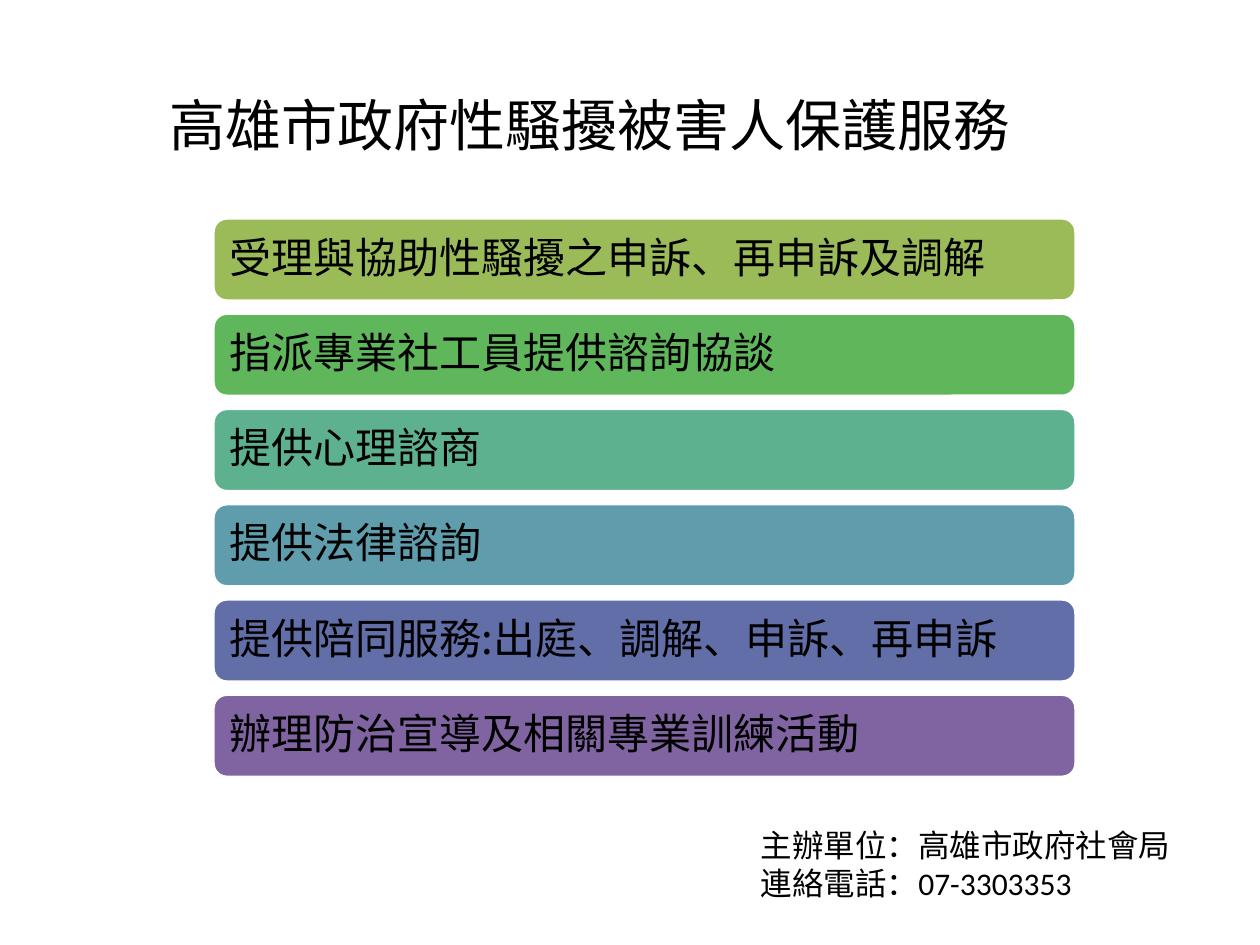
from dataclasses import dataclass

from lxml.etree import SubElement
from pptx import Presentation
from pptx.dml.color import RGBColor
from pptx.enum.shapes import MSO_SHAPE
from pptx.enum.text import MSO_ANCHOR, PP_ALIGN
from pptx.oxml.ns import qn
from pptx.util import Inches, Pt


@dataclass(frozen=True)
class Theme:
    ink: str = "000000"
    outline: str = "FFFFFF"
    bars: tuple = ("9BBB59", "5FB65B", "5DB18E", "5F9DAC", "626EA7", "8064A2")
    title_font: str = "Noto Sans CJK SC"
    body_font: str = "Noto Sans CJK JP"
    contact_font: str = "Calibri"
    title_size: int = 32
    body_size: int = 24
    contact_size: int = 18


def write_text(box, text, size, latin, east_asian, align=PP_ALIGN.LEFT, spacing=1.0):
    frame = box.text_frame
    frame.word_wrap = True
    frame.text = text
    for para in frame.paragraphs:
        para.alignment = align
        para.line_spacing = spacing
        for span in para.runs:
            span.font.size = Pt(size)
            span.font.name = latin
            span.font.color.rgb = RGBColor.from_string(theme.ink)
            SubElement(span.font._element, qn("a:ea"), typeface=east_asian)
    return frame


theme = Theme()
services = (
    "受理與協助性騷擾之申訴、再申訴及調解",
    "指派專業社工員提供諮詢協談",
    "提供心理諮商",
    "提供法律諮詢",
    "提供陪同服務:出庭、調解、申訴、再申訴",
    "辦理防治宣導及相關專業訓練活動",
)
contact = "主辦單位：高雄市政府社會局\n連絡電話：07-3303353"

deck = Presentation()
deck.slide_width, deck.slide_height = Inches(10), Inches(7.5)
page = deck.slides.add_slide(deck.slide_layouts[6])

title = page.shapes.add_textbox(Inches(1.06), Inches(0.36), Inches(7.24), Inches(1.25))
frame = write_text(title, "高雄市政府性騷擾被害人保護服務", theme.title_size,
                   theme.title_font, theme.title_font, PP_ALIGN.CENTER)
frame.vertical_anchor = MSO_ANCHOR.MIDDLE

bar_left, first_top, bar_width, bar_height = 1.69, 1.73, 6.85, 0.66
row_pitch = (5.51 - first_top) / (len(services) - 1)
for row, (service, color) in enumerate(zip(services, theme.bars)):
    bar = page.shapes.add_shape(
        MSO_SHAPE.ROUNDED_RECTANGLE, Inches(bar_left), Inches(first_top + row * row_pitch),
        Inches(bar_width), Inches(bar_height))
    bar.shadow.inherit = False
    bar.fill.solid()
    bar.fill.fore_color.rgb = RGBColor.from_string(color)
    bar.line.color.rgb = RGBColor.from_string(theme.outline)
    bar.line.width = Pt(2)
    frame = write_text(bar, service, theme.body_size, theme.body_font, theme.body_font,
                       spacing=0.9)
    frame.vertical_anchor = MSO_ANCHOR.MIDDLE
    frame.margin_left = frame.margin_right = Inches(0.1)
    frame.margin_top = frame.margin_bottom = Inches(0.1)

contact_box = page.shapes.add_textbox(Inches(5.94), Inches(6.51), Inches(3.62), Inches(0.71))
write_text(contact_box, contact, theme.contact_size, theme.contact_font, theme.body_font)

deck.save("out.pptx")
